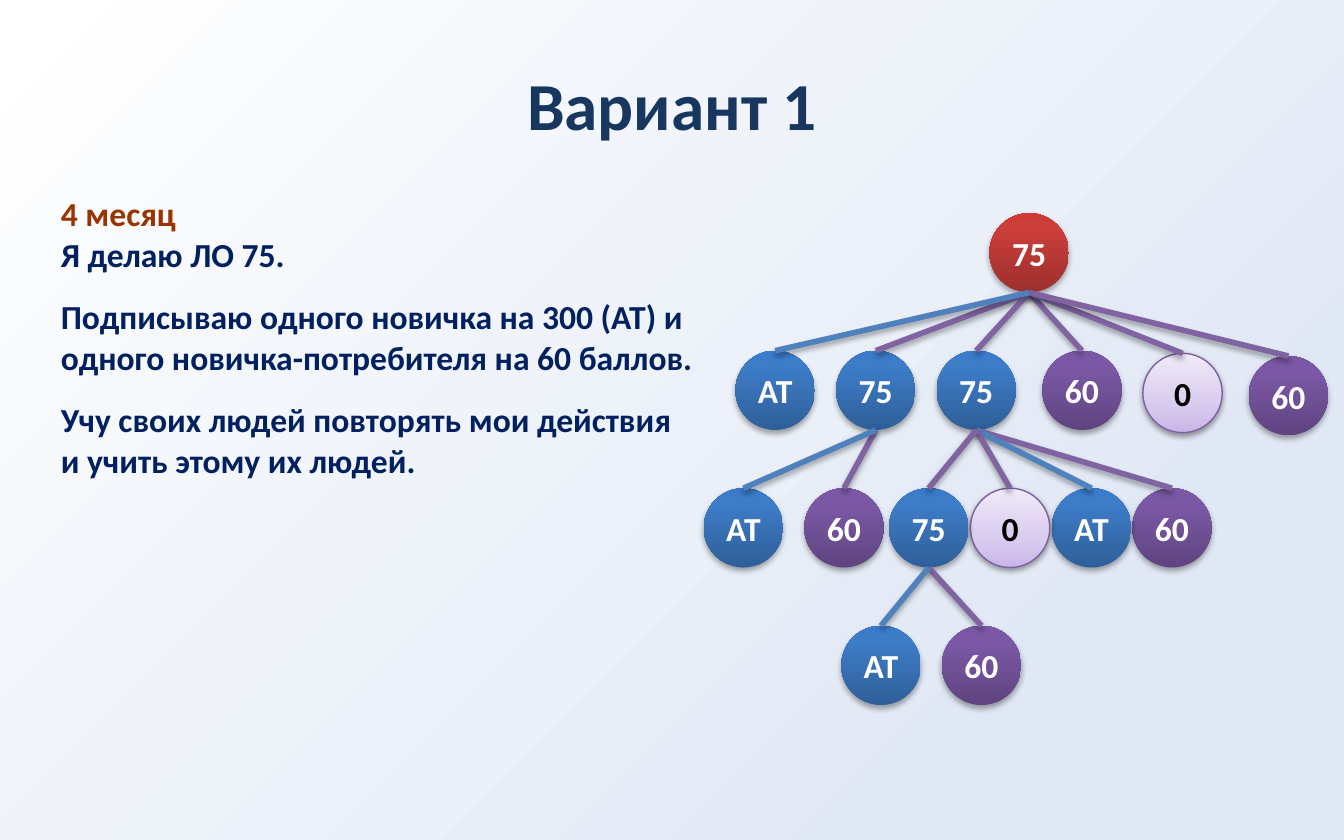
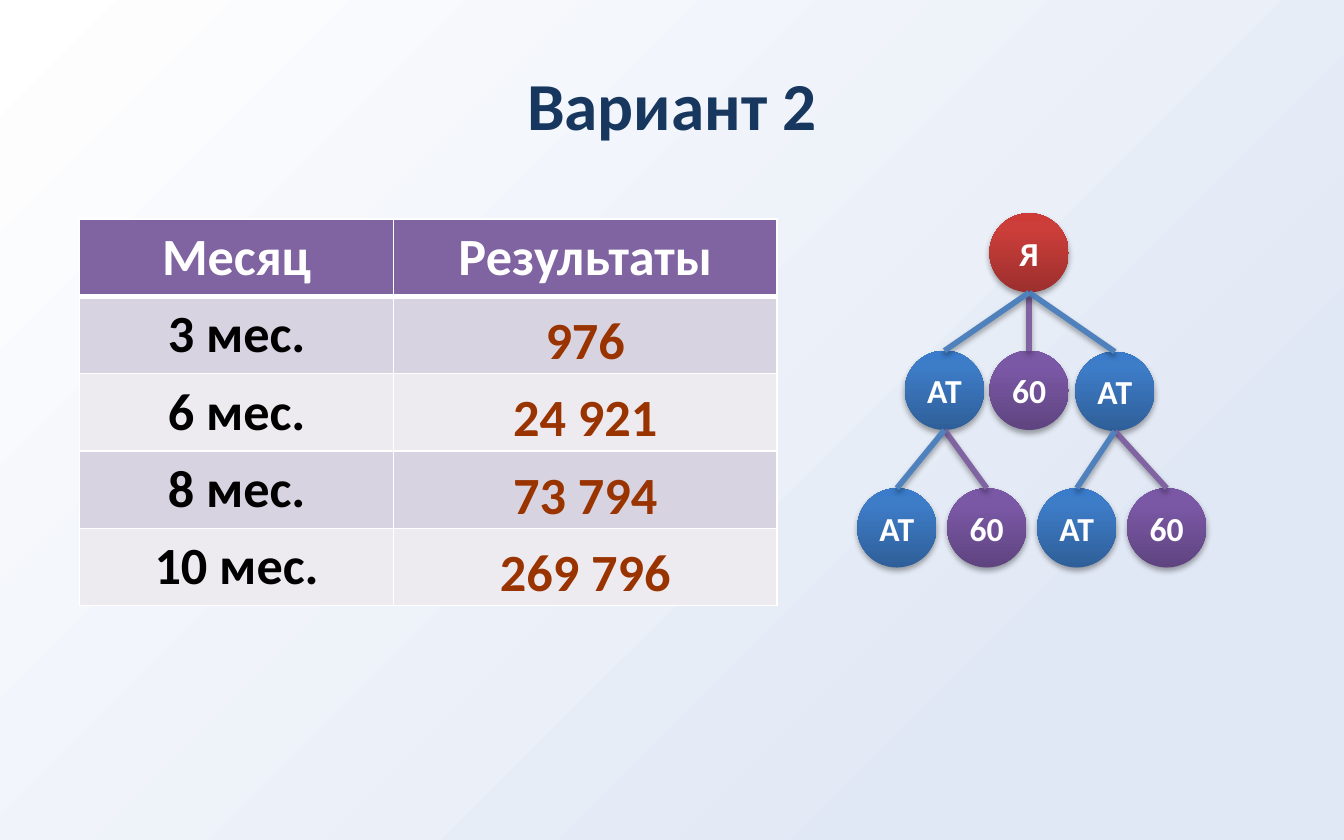
from pptx import Presentation
from pptx.dml.color import RGBColor
from pptx.enum.shapes import MSO_CONNECTOR, MSO_SHAPE
from pptx.enum.text import MSO_ANCHOR, MSO_AUTO_SIZE, PP_ALIGN
from pptx.oxml import parse_xml
from pptx.oxml.ns import nsdecls, qn
from pptx.util import Cm, Pt

OVAL, STRAIGHT = MSO_SHAPE.OVAL, MSO_CONNECTOR.STRAIGHT
TOP, MIDDLE, BOTTOM = MSO_ANCHOR.TOP, MSO_ANCHOR.MIDDLE, MSO_ANCHOR.BOTTOM
LEFT, CENTER = PP_ALIGN.LEFT, PP_ALIGN.CENTER
GROW = MSO_AUTO_SIZE.SHAPE_TO_FIT_TEXT
TITLE_ONLY = 5

COLORS = {
    "title": "17375E", "accent": "993300", "text": "002060",
    "white": "FFFFFF", "black": "000000",
    "blue": "4F81BD", "purple": "8064A2", "pale line": "7D60A0",
    "odd row": "D8D3E0", "even row": "EDEAF0",
}
BACKDROP = {0: "FFFFFF", 80: "E1E8F5"}
GRADIENTS = {
    "red": {0: "9C2F2D", 80: "CB3E3A", 100: "CE3B37"},
    "blue": {0: "2F5F99", 80: "3D7CC7", 100: "3A7CCB"},
    "purple": {0: "5F4480", 80: "7B58A6", 100: "7C57A8"},
    "pale": {0: "C9B5E8", 35: "D8CBEE", 100: "F0EAF9"},
}
KINDS = {"АТ": "blue", "75": "blue", "60": "purple", "0": "pale"}

# Tree measures in centimetres
DIAMETER, TREE_TOP, LEVEL_STEP = 1.5, 4.03, 2.6


def rgb(name):
    return RGBColor.from_string(COLORS[name])


def assign(target, values):
    for name, value in values.items():
        setattr(target, name, value)


def set_gradient(fill, owner, stops, angle):
    """Fill with any number of stops; owner is the element holding the fill."""
    fill.gradient()
    fill.gradient_angle = angle
    stop_list = next(owner.iter(qn("a:gsLst")))
    stop_list.clear()
    for percent, color in stops.items():
        stop_list.append(parse_xml(
            f'<a:gs {nsdecls("a")} pos="{percent * 1000}">'
            f'<a:srgbClr val="{color}"/></a:gs>'))


def add_shadow(properties, alpha=35, distance=23000):
    properties.append(parse_xml(
        f'<a:effectLst {nsdecls("a")}><a:outerShdw blurRad="40000" '
        f'dist="{distance}" dir="5400000" rotWithShape="0">'
        f'<a:srgbClr val="{COLORS["black"]}"><a:alpha val="{alpha * 1000}"/>'
        f'</a:srgbClr></a:outerShdw></a:effectLst>'))


def set_borders(cell, bottom=1):
    widths = {"lnL": 1, "lnR": 1, "lnT": 1, "lnB": bottom}
    for side, width in widths.items():
        cell._tc.get_or_add_tcPr().append(parse_xml(
            f'<a:{side} {nsdecls("a")} w="{Pt(width)}"><a:solidFill>'
            f'<a:srgbClr val="{COLORS["white"]}"/></a:solidFill></a:{side}>'))


class Deck:
    """Holds the shared style and the slide being built."""

    def __init__(self):
        self.prs = Presentation()
        assign(self.prs, {"slide_width": Cm(25.4), "slide_height": Cm(15.88)})
        master = self.prs.slide_master
        set_gradient(master.background.fill, master._element, BACKDROP, 315)
        self.slide = None

    def put_text(self, paragraph, text, color, size=18, align=CENTER):
        paragraph.text = text
        paragraph.alignment = align
        for run in paragraph.runs:
            assign(run.font, {"name": "Calibri", "size": Pt(size), "bold": True})
            run.font.color.rgb = rgb(color)

    def start(self, heading):
        self.slide = self.prs.slides.add_slide(self.prs.slide_layouts[TITLE_ONLY])
        title = self.slide.shapes.title
        assign(title, {"left": Cm(1.27), "top": Cm(0.64),
                       "width": Cm(22.86), "height": Cm(2.65)})
        title.text_frame.vertical_anchor = MIDDLE
        self.put_text(title.text_frame.paragraphs[0], heading, "title", 36)

    def story(self, lines, left, top, width, height):
        box = self.slide.shapes.add_textbox(Cm(left), Cm(top), Cm(width), Cm(height))
        frame = box.text_frame
        assign(frame, {"word_wrap": True, "auto_size": GROW})
        for number, (text, color, gap) in enumerate(lines):
            paragraph = frame.add_paragraph() if number else frame.paragraphs[0]
            self.put_text(paragraph, text, color, align=LEFT)
            if gap:
                paragraph.space_before = Pt(gap)

    def circle(self, label, kind, left, top):
        person = self.slide.shapes.add_shape(
            OVAL, Cm(left), Cm(top), Cm(DIAMETER), Cm(DIAMETER))
        set_gradient(person.fill, person._element, GRADIENTS[kind], 90)
        if kind == "pale":
            person.line.color.rgb = rgb("pale line")
            person.line.width = Pt(0.75)
            add_shadow(person._element.spPr, 38, 20000)
        else:
            person.line.fill.background()
            add_shadow(person._element.spPr)
        frame = person.text_frame
        assign(frame, {"margin_left": Cm(0.1), "margin_right": Cm(0.1),
                       "margin_top": Cm(0.13), "margin_bottom": Cm(0.13),
                       "vertical_anchor": MIDDLE, "word_wrap": True})
        self.put_text(frame.paragraphs[0], label,
                      "black" if kind == "pale" else "white")

    def branch(self, start, end, color):
        link = self.slide.shapes.add_connector(
            STRAIGHT, *(Cm(value) for value in (*start, *end)))
        link.line.color.rgb = rgb(color)
        link.line.width = Pt(3)
        add_shadow(link._element.spPr)

    def tree(self, node, level=0, parent_foot=None):
        """Draw a node (label, left, drop, children) and all below it."""
        label, left, drop, children = node
        top = TREE_TOP + level * LEVEL_STEP + drop
        center = left + DIAMETER / 2
        self.circle(label, KINDS[label] if parent_foot else "red", left, top)
        if parent_foot:
            self.branch(parent_foot, (center, top),
                        "blue" if label == "АТ" else "purple")
        for child in children:
            self.tree(child, level + 1, (center, top + DIAMETER))

    def table(self, rows, left, top, widths, row_height):
        grid = self.slide.shapes.add_table(
            len(rows), len(widths), Cm(left), Cm(top),
            Cm(sum(widths)), Cm(row_height * len(rows))).table
        for column, width in zip(grid.columns, widths):
            column.width = Cm(width)
        for r, row in enumerate(rows):
            fill = ("odd row" if r % 2 else "even row") if r else "purple"
            for c, text in enumerate(row):
                cell = grid.cell(r, c)
                set_borders(cell, bottom=1 if r else 3)
                cell.fill.solid()
                cell.fill.fore_color.rgb = rgb(fill)
                cell.vertical_anchor = TOP
                if r and c:
                    assign(cell, {"margin_left": Cm(0.03), "margin_right": Cm(0.03),
                                  "margin_top": Cm(0.03), "margin_bottom": 0,
                                  "vertical_anchor": BOTTOM})
                color = ("black", "accent")[c] if r else "white"
                self.put_text(cell.text_frame.paragraphs[0], text, color, 28)


def node(label, left, *children, drop=0):
    return label, left, drop, children


def main():
    deck = Deck()

    # Variant 1: fourth month; later branches lie over earlier ones
    deck.start("Вариант 1")
    deck.tree(node(
        "75", 18.7,
        node("60", 19.7),
        node("75", 15.8, node("60", 15.2), node("АТ", 13.3)),
        node("75", 17.7,
             node("60", 21.4), node("АТ", 19.88), node("0", 18.34),
             node("75", 16.8, node("60", 17.8), node("АТ", 15.9))),
        node("0", 21.6, drop=0.05),
        node("60", 23.6, drop=0.1),
        node("АТ", 13.9)))
    deck.story([
        ("4 месяц", "accent", 0),
        ("Я делаю ЛО 75.", "text", 0),
        ("Подписываю одного новичка на 300 (АТ) и одного "
         "новичка-потребителя на 60 баллов.", "text", 12),
        ("Учу своих людей повторять мои действия\nи учить этому их людей.", "text", 12),
    ], 0.9, 3.53, 13.8, 5.74)

    # Variant 2: results by month
    deck.start("Вариант 2")
    deck.table([
        ("Месяц", "Результаты"),
        ("3 мес.", "976"),
        ("6 мес.", "24 921"),
        ("8 мес.", "73 794"),
        ("10 мес.", "269 796"),
    ], 1.5, 4.14, (5.94, 7.24), 1.44)
    deck.tree(node(
        "Я", 18.7,
        node("60", 18.7),
        node("АТ", 20.32, node("60", 21.3), node("АТ", 19.6), drop=0.02),
        node("АТ", 17.1, node("60", 17.9), node("АТ", 16.2))))

    deck.prs.save("out.pptx")


if __name__ == "__main__":
    main()
